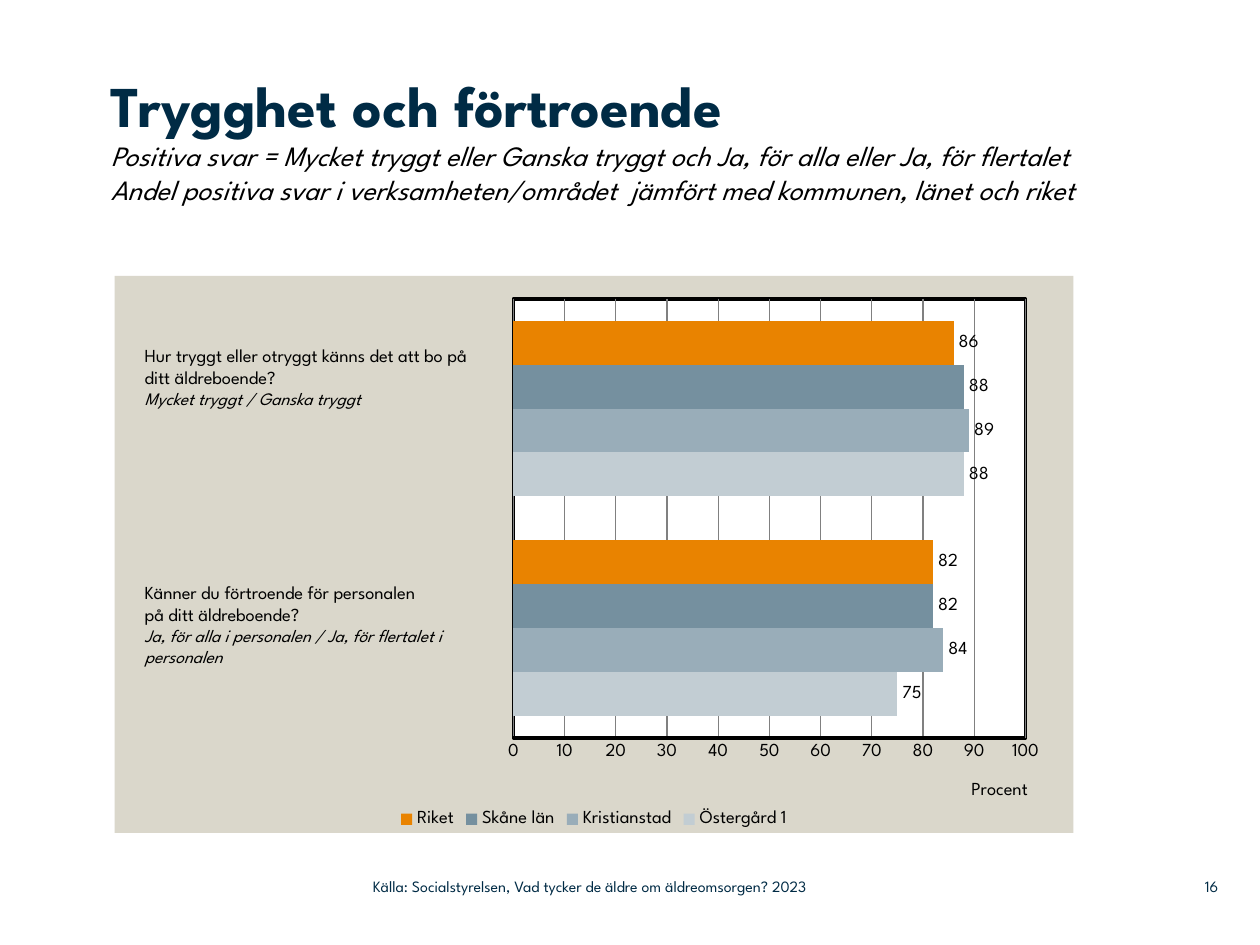
import copy

import pptx
import pptx.chart.data
import pptx.dml.color
import pptx.enum.chart
import pptx.enum.text
import pptx.oxml
import pptx.util
from lxml import etree

Inches = pptx.util.Inches
Pt = pptx.util.Pt
FONT = "League Spartan"
NAVY = "002B45"
BLACK = "000000"
CATEGORIES = ("1", "2")
SERIES = (
    ("Östergård 1", (75, 88), "C2CDD3"),
    ("Kristianstad", (84, 89), "99ADB9"),
    ("Skåne län", (82, 88), "75909F"),
    ("Riket", (82, 86), "E98300"),
)


def color(hex_text):
    return pptx.dml.color.RGBColor.from_string(hex_text)


def style_font(font, size, hex_text=BLACK, **extra):
    values = {"name": FONT, "size": Pt(size), "bold": False, **extra}
    for name, value in values.items():
        setattr(font, name, value)
    font.color.rgb = color(hex_text)


def paint(element, hex_text):
    element.fill.solid()
    element.fill.fore_color.rgb = color(hex_text)


def draw_line(line, hex_text, width):
    line.color.rgb = color(hex_text)
    line.width = Pt(width)


def chart_xml(tag, inner):
    return pptx.oxml.parse_xml(
        f'<c:{tag} xmlns:c="http://schemas.openxmlformats.org/drawingml/2006/chart" '
        f'xmlns:a="http://schemas.openxmlformats.org/drawingml/2006/main">{inner}</c:{tag}>')


def manual_layout(**values):
    """Layout element placed in fractions of the chart's size."""
    inner = "".join(f'<c:{name} val="{value}"/>' for name, value in values.items())
    return chart_xml("layout", f"<c:manualLayout>{inner}</c:manualLayout>")


def shape_fill(fill, line, points):
    """Chart shape properties with a solid fill and, if points is set, an outline."""
    solid = '<a:solidFill><a:srgbClr val="{}"/></a:solidFill>'
    outline = f'<a:ln w="{Pt(points)}">{solid.format(line)}</a:ln>' if points else "<a:ln><a:noFill/></a:ln>"
    return chart_xml("spPr", solid.format(fill) + outline)


class Slide:
    def __init__(self, deck):
        self.page = deck.slides.add_slide(deck.slide_layouts[5])

    def set_frame(self, frame, margins=None, anchor="TOP"):
        values = {"word_wrap": True, "auto_size": pptx.enum.text.MSO_AUTO_SIZE.NONE,
                  "vertical_anchor": getattr(pptx.enum.text.MSO_ANCHOR, anchor)}
        if margins is not None:
            for side in ("left", "top", "right", "bottom"):
                values[f"margin_{side}"] = Inches(margins)
        for name, value in values.items():
            setattr(frame, name, value)

    def title(self, place, heading, lines):
        box = self.page.shapes.title
        box.left, box.top, box.width, box.height = map(Inches, place)
        self.set_frame(box.text_frame, 0)
        para = box.text_frame.paragraphs[0]
        para.alignment = pptx.enum.text.PP_ALIGN.LEFT
        para.line_spacing = 1.0
        span = para.add_run()
        span.text = heading
        style_font(span.font, 33, NAVY, bold=True)
        for text in lines:
            para.add_line_break()
            line_break = para._p[-1]
            span = para.add_run()
            span.text = text
            style_font(span.font, 16, italic=True)
            line_break.append(copy.deepcopy(span._r.rPr))

    def text(self, place, lines, hex_text=BLACK, align="LEFT", **frame_values):
        """Text box; each line is (text, size, italic)."""
        frame = self.page.shapes.add_textbox(*map(Inches, place)).text_frame
        self.set_frame(frame, **frame_values)
        for index, (text, size, italic) in enumerate(lines):
            para = frame.add_paragraph() if index else frame.paragraphs[0]
            para.alignment = getattr(pptx.enum.text.PP_ALIGN, align)
            span = para.add_run()
            span.text = text
            style_font(span.font, size, hex_text, italic=italic)

    def bar_chart(self, place):
        data = pptx.chart.data.CategoryChartData()
        data.categories = CATEGORIES
        for name, values, _ in SERIES:
            data.add_series(name, values)
        chart = self.page.shapes.add_chart(
            pptx.enum.chart.XL_CHART_TYPE.BAR_CLUSTERED, *map(Inches, place), data).chart
        style_font(chart.font, 10.5)
        chart.has_title = False
        chart.has_legend = True
        chart.legend.position = pptx.enum.chart.XL_LEGEND_POSITION.BOTTOM
        chart.legend.include_in_layout = False
        style_font(chart.legend.font, 10.5)

        plot = chart.plots[0]
        plot.gap_width = 100
        plot.overlap = 0
        plot.vary_by_categories = False
        for series, (_, _, hex_text) in zip(plot.series, SERIES):
            paint(series.format, hex_text)
            labels = series.data_labels
            labels.show_value = True
            labels.position = pptx.enum.chart.XL_LABEL_POSITION.OUTSIDE_END
            style_font(labels.font, 10.5)

        chart.category_axis.visible = False
        axis = chart.value_axis
        no_tick = pptx.enum.chart.XL_TICK_MARK.NONE
        for name, value in {"minimum_scale": 0, "maximum_scale": 100, "major_unit": 10,
                            "major_tick_mark": no_tick, "minor_tick_mark": no_tick,
                            "has_major_gridlines": True}.items():
            setattr(axis, name, value)
        draw_line(axis.major_gridlines.format.line, "808080", 0.75)
        draw_line(axis.format.line, BLACK, 2)
        style_font(axis.tick_labels.font, 10.5)
        span = axis.axis_title.text_frame.paragraphs[0].add_run()
        span.text = "Procent"
        style_font(span.font, 10.5)
        self.place_chart_parts(chart)

    def place_chart_parts(self, chart):
        title = chart.value_axis.axis_title._element
        for old in title.xpath("c:layout"):
            title.remove(old)
        title.xpath("c:tx")[0].addnext(
            manual_layout(xMode="edge", yMode="edge", x=0.89, y=0.9))
        area = chart._chartSpace.chart.plotArea
        for old in area.xpath("c:layout"):
            area.remove(old)
        area.insert(0, manual_layout(layoutTarget="inner", xMode="edge", yMode="edge",
                                     x=0.416, y=0.041, w=0.534, h=0.789))
        area.append(shape_fill("FFFFFF", BLACK, 2))
        chart._chartSpace.chart.addnext(shape_fill("DAD7CB", BLACK, 0))


def main():
    deck = pptx.Presentation()
    deck.slide_width, deck.slide_height = Inches(10), Inches(7.5)
    slide = Slide(deck)
    slide.bar_chart((0.91, 2.19, 7.61, 4.42))
    slide.title((0.88, 0.55, 7.75, 1.64), "Trygghet och förtroende", (
        "Positiva svar = Mycket tryggt eller Ganska tryggt och Ja, för alla eller Ja, för flertalet",
        "Andel positiva svar i verksamheten/området  jämfört med kommunen, länet och riket"))
    slide.text((1.05, 2.68, 2.98, 0.81), (
        ("Hur tryggt eller otryggt känns det att bo på ditt äldreboende?", 10.5, False),
        ("Mycket tryggt / Ganska tryggt", 10, True)))
    slide.text((1.05, 4.56, 3, 0.98), (
        ("Känner du förtroende för personalen", 10.5, False),
        ("på ditt äldreboende?", 10.5, False),
        ("Ja, för alla i personalen / Ja, för flertalet i personalen", 10, True)))
    footer = {"hex_text": NAVY, "margins": 0, "anchor": "MIDDLE"}
    slide.text((9.2, 6.89, 0.47, 0.29), [("16", 9, False)], align="RIGHT", **footer)
    slide.text((2.96, 6.89, 4.43, 0.29), [
        ("Källa: Socialstyrelsen, Vad tycker de äldre om äldreomsorgen? 2023", 9, False)], **footer)
    deck.save("out.pptx")


if __name__ == "__main__":
    main()
